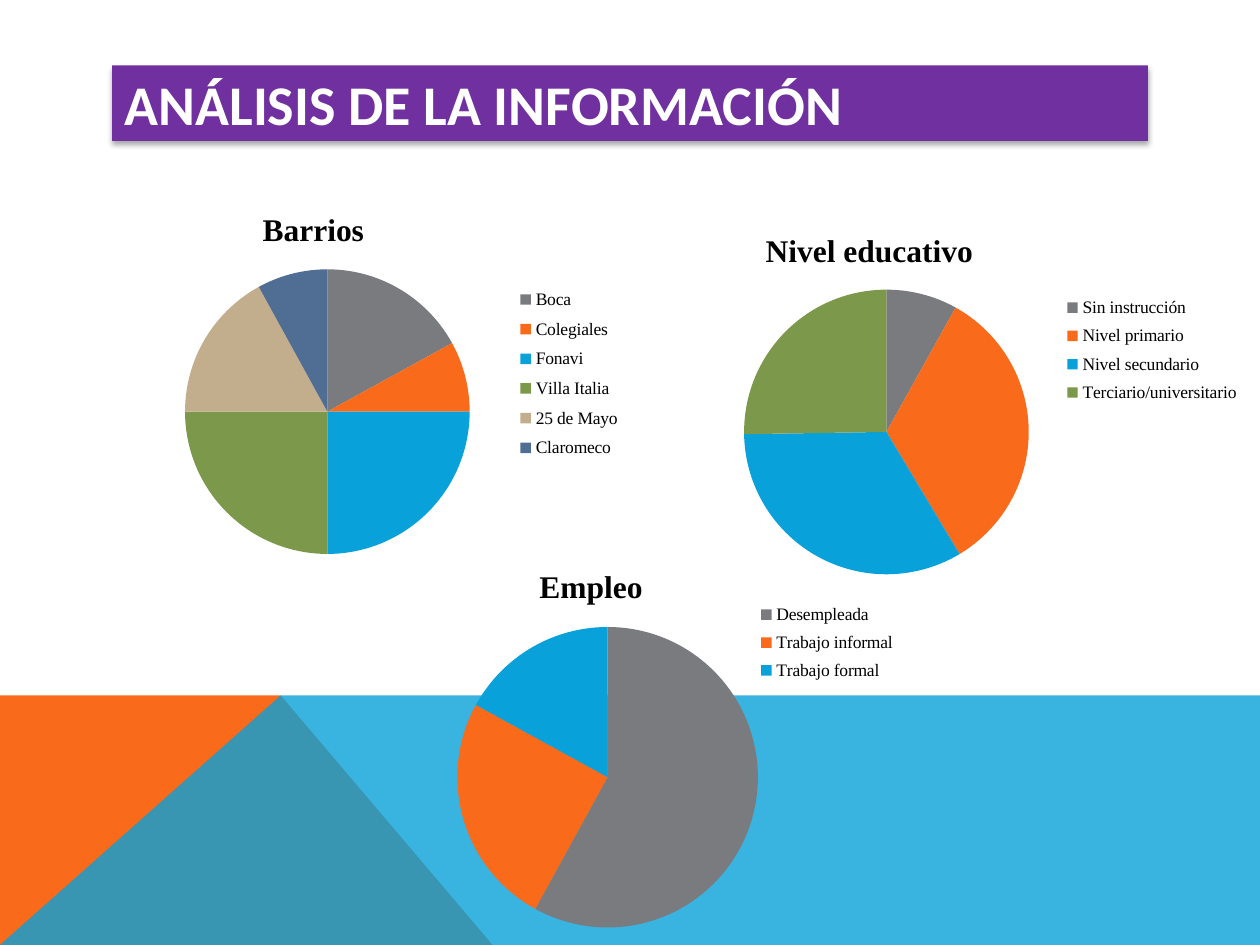
from pptx import Presentation
from pptx.chart.data import CategoryChartData as Data
from pptx.dml.color import RGBColor
from pptx.enum.chart import XL_CHART_TYPE as Kind, XL_LEGEND_POSITION as Side
from pptx.enum.text import MSO_ANCHOR as Anchor, PP_ALIGN as Align
from pptx.oxml import parse_xml
from pptx.oxml.ns import nsdecls, qn
from pptx.util import Cm, Pt


def paint(fill, tone):
    fill.solid()
    fill.fore_color.rgb = RGBColor.from_string(tone)


def place(node, spot, box, frame):
    for old in node.findall(qn("c:layout")):
        node.remove(old)
    x, y, *size = box
    left, top, wide, high = frame
    parts = {"xMode": "edge", "yMode": "edge",
             "x": (x - left) / wide, "y": (y - top) / high}
    if size:
        parts.update(w=size[0] / wide, h=size[1] / high)
    if node.tag == qn("c:plotArea"):
        parts = {"layoutTarget": "inner", **parts}
    rows = "".join(f'<c:{key} val="{val}"/>' for key, val in parts.items())
    node.insert(spot, parse_xml(
        f'<c:layout {nsdecls("c")}><c:manualLayout>{rows}</c:manualLayout></c:layout>'))


deck = Presentation()
deck.slide_width, deck.slide_height = Cm(25.4), Cm(19.05)
slide = deck.slides.add_slide(deck.slide_layouts[5])
shapes = slide.shapes

bands = [
    ("F96A1B", [(0, 19.05), (0, 14.02), (5.66, 14.02), (9.93, 19.05)]),
    ("08A1D9", [(0, 19.05), (5.66, 14.02), (25.4, 14.02), (25.4, 19.05)]),
]
for tone, dots in bands:
    dots = [(Cm(x), Cm(y)) for x, y in dots]
    pen = shapes.build_freeform(*dots[0])
    pen.add_line_segments(dots[1:], close=True)
    band = pen.convert_to_shape()
    band.shadow.inherit = False
    band.line.fill.background()
    paint(band.fill, tone)
band.fill._xPr.find(".//" + qn("a:srgbClr")).append(
    parse_xml(f'<a:alpha {nsdecls("a")} val="80000"/>'))

title = shapes.title
spot = {"left": 2.26, "top": 1.32, "width": 20.88, "height": 1.52}
for key, val in spot.items():
    setattr(title, key, Cm(val))
paint(title.fill, "7030A0")
title.element.spPr.append(parse_xml(
    f'<a:effectLst {nsdecls("a")}><a:outerShdw blurRad="39370" dist="22860" dir="5400000" '
    'rotWithShape="0"><a:srgbClr val="000000"><a:alpha val="35000"/></a:srgbClr>'
    '</a:outerShdw></a:effectLst>'))
title.text_frame.text = "ANÁLISIS DE LA INFORMACIÓN"
title.text_frame.vertical_anchor = Anchor.MIDDLE
line = title.text_frame.paragraphs[0]
line.alignment = Align.LEFT
font = line.runs[0].font
for key, val in {"name": "Calibri", "size": Pt(32), "bold": True}.items():
    setattr(font, key, val)
paint(font.fill, "FFFFFF")

tones = ["797B7E", "F96A1B", "08A1D9", "7C984A", "C2AD8D", "506E94"]
serif = "Times New Roman"
pies = [
    ("Barrios",
     {"Boca": 17, "Colegiales": 8, "Fonavi": 25,
      "Villa Italia": 25, "25 de Mayo": 17, "Claromeco": 8},
     (0.71, 3.73, 14.2, 7.8), (5.18, 4.13),
     (3.73, 5.43, 5.74, 5.74), (10.32, 5.64, 2.3, 3.79)),
    ("Nivel educativo",
     {"Sin instrucción": 8, "Nivel primario": 33,
      "Nivel secundario": 33, "Terciario/universitario": 25},
     (13.69, 4.11, 12.19, 7.8), (15.32, 4.54),
     (15, 5.84, 5.74, 5.74), (21.37, 5.83, 3.7, 2.46)),
    ("Empleo",
     {"Desempleada": 58, "Trabajo informal": 25, "Trabajo formal": 17},
     (7.49, 10.92, 12.6, 8.13), (10.76, 11.31),
     (9.22, 12.64, 6.06, 6.06), (15.22, 12.03, 2.9, 1.85)),
]
for name, parts, frame, head, disc, key_box in pies:
    data = Data()
    data.categories = list(parts)
    data.add_series(name, list(parts.values()))
    chart = shapes.add_chart(Kind.PIE, *map(Cm, frame), data).chart
    chart.has_title = chart.has_legend = True
    chart.chart_title.text_frame.text = name
    legend = chart.legend
    legend.position = Side.RIGHT
    legend.include_in_layout = False
    run = chart.chart_title.text_frame.paragraphs[0].runs[0]
    looks = [
        (chart.font, {"name": "Karla", "size": Pt(10)}),
        (run.font, {"name": serif, "size": Pt(18), "bold": True}),
        (legend.font, {"name": serif, "size": Pt(10)}),
    ]
    for font, look in looks:
        for key, val in look.items():
            setattr(font, key, val)
        paint(font.fill, "000000")
    plot = chart.plots[0]
    plot.vary_by_categories = True
    for i, tone in enumerate(tones[:len(parts)]):
        paint(plot.series[0].points[i].format.fill, tone)
    root = chart.element
    for tag, at, box in [("title", 1, head), ("plotArea", 0, disc), ("legend", 1, key_box)]:
        place(root.find(".//" + qn("c:" + tag)), at, box, frame)

deck.save("out.pptx")
